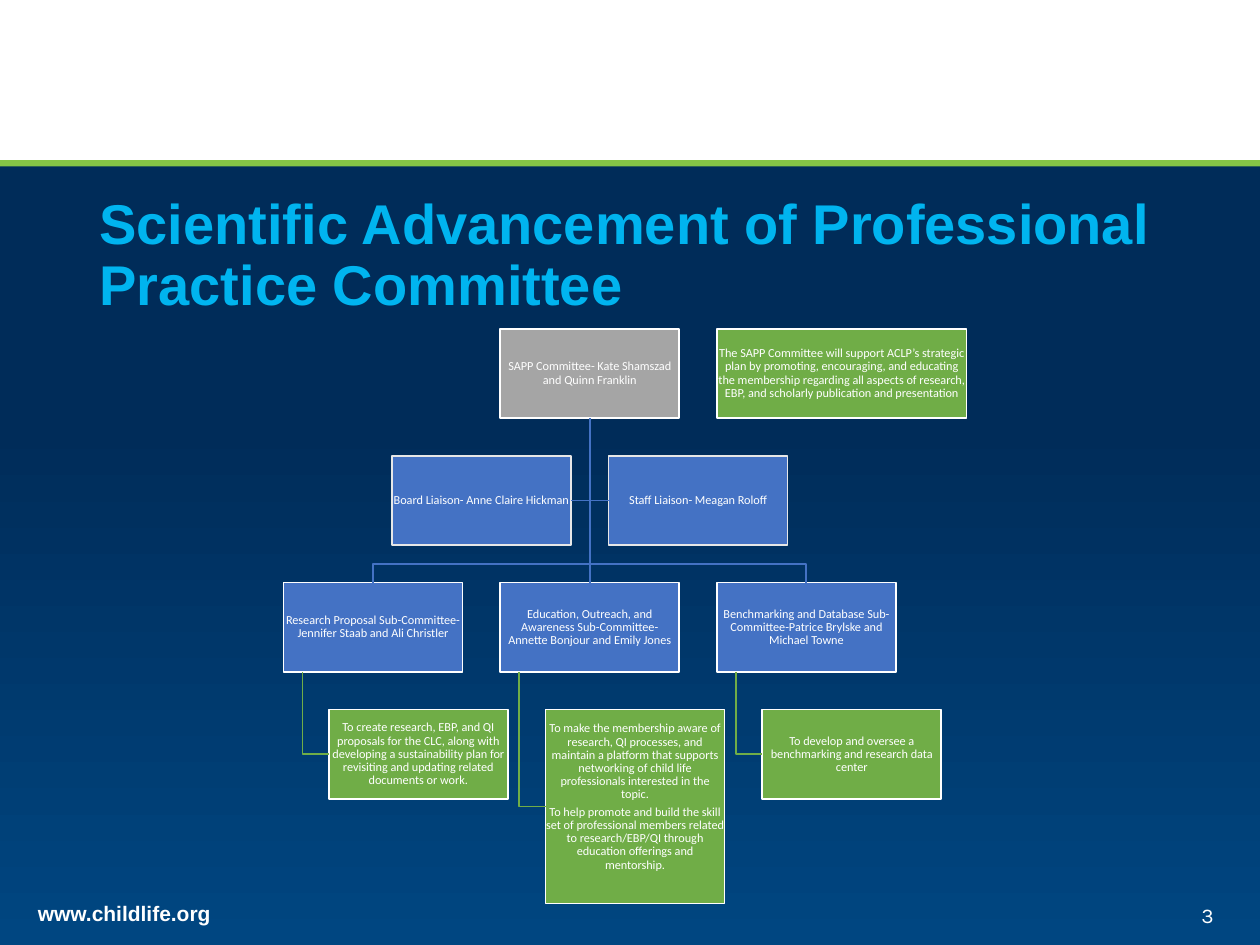
import pptx
import pptx.util
import pptx.dml.color
import pptx.enum.shapes
import pptx.enum.text
import pptx.oxml.ns
from lxml import etree

Inches, Pt = pptx.util.Inches, pptx.util.Pt
ALIGN, ANCHOR = pptx.enum.text.PP_ALIGN, pptx.enum.text.MSO_ANCHOR
RECTANGLE = pptx.enum.shapes.MSO_SHAPE.RECTANGLE

COLOURS = {
    "sky": "004681", "night": "002C59", "stripe": "85C546", "title": "00B4EF",
    "white": "FFFFFF", "pale": "E7E7E7",
    "grey": "A5A5A5", "blue": "4472C4", "green": "70AD47",
}
TITLE = "Scientific Advancement of Professional Practice Committee"
LEAD = "SAPP Committee- Kate Shamszad and Quinn Franklin"
MISSION = ("The SAPP Committee will support ACLP’s strategic plan by promoting, encouraging, "
           "and educating the membership regarding all aspects of research, EBP, and "
           "scholarly publication and presentation")
LIAISONS = ["Board Liaison- Anne Claire Hickman", "Staff Liaison- Meagan Roloff"]
# Sub-committee, its goals, height of the goals box
SUBCOMMITTEES = [
    ("Research Proposal Sub-Committee- Jennifer Staab and Ali Christler",
     ["To create research, EBP, and QI proposals for the CLC, along with developing a "
      "sustainability plan for revisiting and updating related documents or work."], 0.71),
    ("Education, Outreach, and Awareness Sub-Committee- Annette Bonjour and Emily Jones",
     ["To make the membership aware of research, QI processes, and maintain a platform that "
      "supports networking of child life professionals interested in the topic.",
      "To help promote and build the skill set of professional members related to "
      "research/EBP/QI through education offerings and mentorship."], 1.54),
    ("Benchmarking and Database Sub-Committee-Patrice Brylske and Michael Towne",
     ["To develop and oversee a benchmarking and research data center"], 0.71),
]

WIDTH, HEIGHT = 10, 7.5
BAND_TOP, STRIPE = 1.32, 0.05
CHART_LEFT, CHART_TOP = 2.25, 2.61
BOX_WIDTH, BOX_HEIGHT = 1.42, 0.71
COLUMN, ROW = 1.72, 1.007
GOAL_INDENT, STEM_INDENT = 0.36, 0.15


def colour(name):
    return pptx.dml.color.RGBColor.from_string(COLOURS[name])


def style(paragraph, size, font, colour_name="white", bold=False):
    for span in paragraph.runs:
        span.font.size, span.font.name, span.font.bold = Pt(size), font, bold
        span.font.color.rgb = colour(colour_name)


def set_margins(frame, bottom=0):
    frame.margin_left = frame.margin_right = frame.margin_top = 0
    frame.margin_bottom = Inches(bottom)


def add_rectangle(page, left, top, width, height, fill=None, line=None):
    box = page.shapes.add_shape(RECTANGLE, *map(Inches, (left, top, width, height)))
    box.shadow.inherit = False
    if fill:
        box.fill.solid()
        box.fill.fore_color.rgb = colour(fill)
    if line:
        box.line.color.rgb = colour(line)
        box.line.width = Pt(1)
    else:
        box.line.fill.background()
    return box


def add_node(page, column, row, texts, fill, line="white", indent=0,
             width=BOX_WIDTH, height=BOX_HEIGHT, bottom=0):
    """Place a chart box at a (possibly fractional) column and a row of the grid."""
    box = add_rectangle(page, CHART_LEFT + column * COLUMN + indent,
                        CHART_TOP + row * ROW, width, height, fill, line)
    frame = box.text_frame
    frame.word_wrap = True
    frame.vertical_anchor = ANCHOR.MIDDLE
    set_margins(frame, bottom)
    frame.text = "\n".join(texts)
    for paragraph in frame.paragraphs:
        paragraph.alignment = ALIGN.CENTER
        paragraph.line_spacing = 0.9
        paragraph.space_after = Pt(2.45)
        style(paragraph, 7, "Calibri")
    return box


def add_elbow(page, points, line):
    """Draw an open line through points given in EMU."""
    builder = page.shapes.build_freeform(*points[0])
    builder.add_line_segments(points[1:], close=False)
    elbow = builder.convert_to_shape()
    elbow.shadow.inherit = False
    elbow.fill.background()
    elbow.line.color.rgb = colour(line)
    elbow.line.width = Pt(1)


def join(page, first, first_site, second, second_site):
    link = page.shapes.add_connector(pptx.enum.shapes.MSO_CONNECTOR.STRAIGHT, 0, 0, 0, 0)
    link.begin_connect(first, first_site)
    link.end_connect(second, second_site)
    link.line.color.rgb = colour("blue")
    link.line.width = Pt(1)
    etree.SubElement(link._element.spPr, pptx.oxml.ns.qn("a:effectLst"))


def add_backdrop(page):
    band = add_rectangle(page, 0, BAND_TOP, WIDTH, HEIGHT - BAND_TOP)
    band.fill.gradient()
    band.fill.gradient_angle = 90
    for stop, (name, position) in zip(band.fill.gradient_stops, [("sky", 0), ("night", 0.67)]):
        stop.color.rgb = colour(name)
        stop.position = position
    add_rectangle(page, 0, BAND_TOP - STRIPE, WIDTH, STRIPE, "stripe")


def add_footer(page):
    address = page.shapes.add_textbox(*map(Inches, (0.3, 7.15, 1.78, 0.3))).text_frame
    set_margins(address)
    address.text = "www.childlife.org"
    style(address.paragraphs[0], 12, "Arial", bold=True)
    number = page.shapes.add_textbox(*map(Inches, (8.84, 7.11, 0.89, 0.28))).text_frame
    number.word_wrap = True
    number.text = "3"
    number.paragraphs[0].alignment = ALIGN.RIGHT
    style(number.paragraphs[0], 12, "Karla")


def format_title(page):
    title = page.shapes.title
    title.left, title.top, title.width, title.height = map(Inches, (0.69, 1.48, 8.62, 1.12))
    frame = title.text_frame
    frame.text = TITLE
    frame.auto_size = pptx.enum.text.MSO_AUTO_SIZE.NONE
    frame.vertical_anchor = ANCHOR.MIDDLE
    paragraph = frame.paragraphs[0]
    paragraph.alignment = ALIGN.LEFT
    paragraph.line_spacing = 0.9
    style(paragraph, 32, "Arial", "title", bold=True)
    title._element.getparent().append(title._element)  # in front of the backdrop


def add_chart_boxes(page):
    lead = add_node(page, 1, 0, [LEAD], "grey")
    add_node(page, 2, 0, [MISSION], "green", width=1.98)
    board, staff = [add_node(page, 0.5 + index, 1, [text], "blue", "pale")
                    for index, text in enumerate(LIAISONS)]
    committees = []
    for column, (name, goals, height) in enumerate(SUBCOMMITTEES):
        committee = add_node(page, column, 2, [name], "blue")
        goal = add_node(page, column, 3, goals, "green", indent=GOAL_INDENT, height=height,
                        bottom=0.15 if len(goals) > 1 else 0)
        stem = committee.left + Inches(STEM_INDENT)
        middle = goal.top + goal.height // 2
        add_elbow(page, [(stem, committee.top + committee.height), (stem, middle),
                         (goal.left, middle)], "green")
        committees.append(committee)

    join(page, lead, 2, committees[1], 0)
    join(page, board, 3, staff, 1)
    first, last = committees[0], committees[-1]
    start, end = [box.left + box.width // 2 for box in (first, last)]
    bus = first.top - Inches((ROW - BOX_HEIGHT) / 2)
    add_elbow(page, [(start, first.top), (start, bus), (end, bus), (end, last.top)], "blue")


def main():
    deck = pptx.Presentation()
    deck.slide_width, deck.slide_height = Inches(WIDTH), Inches(HEIGHT)
    page = deck.slides.add_slide(deck.slide_layouts.get_by_name("Title Only"))
    add_backdrop(page)
    add_footer(page)
    format_title(page)
    add_chart_boxes(page)
    deck.save("out.pptx")


if __name__ == "__main__":
    main()
